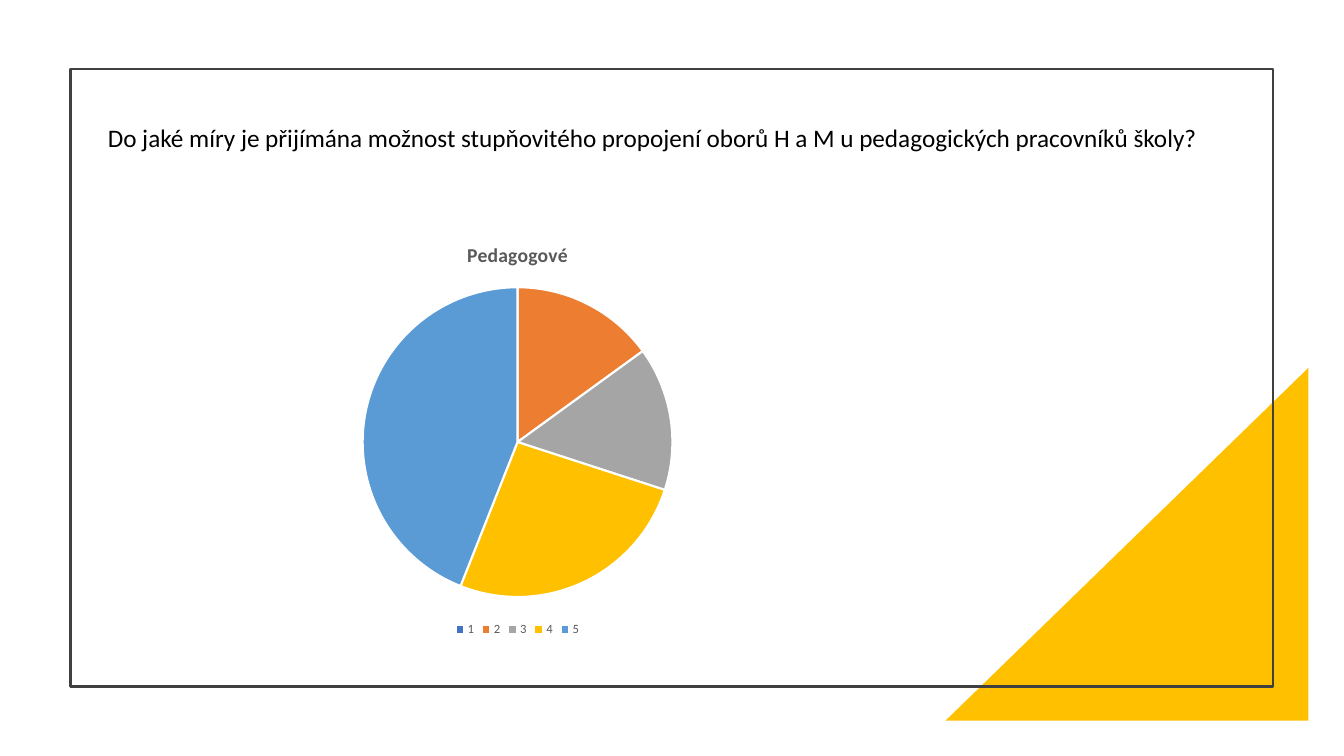
from dataclasses import dataclass

from pptx import Presentation
from pptx.chart.data import CategoryChartData
from pptx.dml.color import RGBColor
from pptx.enum.chart import XL_CHART_TYPE, XL_LEGEND_POSITION
from pptx.enum.shapes import MSO_SHAPE
from pptx.enum.text import MSO_ANCHOR, MSO_AUTO_SIZE, PP_ALIGN
from pptx.util import Pt


@dataclass(frozen=True)
class Theme:
    """Colours, font and type sizes of the slide."""
    font: str = "Calibri"
    text: str = "000000"
    muted: str = "595959"
    frame: str = "404040"
    accent: str = "FFC000"
    gap: str = "FFFFFF"
    slices: tuple = ("4472C4", "ED7D31", "A5A5A5", "FFC000", "5B9BD5")
    question_size: int = 18
    chart_title_size: int = 14
    chart_size: int = 10
    legend_size: int = 9


THEME = Theme()
QUESTION = ("Do jaké míry je přijímána možnost stupňovitého propojení "
            "oborů H a M u pedagogických pracovníků školy?")
SHARES = {"1": 0, "2": 15, "3": 15, "4": 26, "5": 44}


def rgb(value):
    """Turn a hex value into a colour."""
    return RGBColor.from_string(value)


def style_font(font, size, color, bold=False):
    """Apply the theme font with a size and colour."""
    font.name = THEME.font
    font.size = Pt(size)
    font.bold = bold
    font.color.rgb = rgb(color)


def add_corner(slide, box):
    """Add the filled triangle with its right angle at the lower right."""
    sp = slide.shapes.add_shape(MSO_SHAPE.RIGHT_TRIANGLE, *map(Pt, box))
    sp.shadow.inherit = False
    sp.fill.solid()
    sp.fill.fore_color.rgb = rgb(THEME.accent)
    sp.line.fill.background()
    sp.element.spPr.xfrm.set("flipH", "1")


def add_frame(slide, box):
    """Add the unfilled outline around the content."""
    sp = slide.shapes.add_shape(MSO_SHAPE.RECTANGLE, *map(Pt, box))
    sp.shadow.inherit = False
    sp.fill.background()
    sp.line.color.rgb = rgb(THEME.frame)
    sp.line.width = Pt(1.5)


def set_question(slide, box):
    """Place and fill the title placeholder."""
    sp = slide.shapes.title
    sp.left, sp.top, sp.width, sp.height = map(Pt, box)
    tf = sp.text_frame
    tf.word_wrap = True
    tf.auto_size = MSO_AUTO_SIZE.NONE
    tf.vertical_anchor = MSO_ANCHOR.TOP
    p = tf.paragraphs[0]
    p.alignment = PP_ALIGN.JUSTIFY
    p.line_spacing = 1.07
    p.space_after = Pt(8)
    r = p.add_run()
    r.text = QUESTION
    style_font(r.font, THEME.question_size, THEME.text)


def add_pie(slide, box, title, shares):
    """Add a titled pie chart with a legend below."""
    data = CategoryChartData()
    data.categories = list(shares)
    data.add_series(title, list(shares.values()))
    chart = slide.shapes.add_chart(XL_CHART_TYPE.PIE, *map(Pt, box), data).chart
    style_font(chart.font, THEME.chart_size, THEME.text)

    chart.has_title = True
    r = chart.chart_title.text_frame.paragraphs[0].add_run()
    r.text = title
    style_font(r.font, THEME.chart_title_size, THEME.muted, bold=True)
    chart.chart_title.include_in_layout = False

    chart.has_legend = True
    chart.legend.position = XL_LEGEND_POSITION.BOTTOM
    chart.legend.include_in_layout = False
    style_font(chart.legend.font, THEME.legend_size, THEME.muted)

    plot = chart.plots[0]
    plot.vary_by_categories = True
    for i, color in enumerate(THEME.slices):
        fmt = plot.series[0].points[i].format
        fmt.fill.solid()
        fmt.fill.fore_color.rgb = rgb(color)
        fmt.line.color.rgb = rgb(THEME.gap)
        fmt.line.width = Pt(1.5)


def main():
    """Build and save the slide."""
    prs = Presentation()
    prs.slide_width, prs.slide_height = Pt(960), Pt(540)
    slide = prs.slides.add_slide(prs.slide_layouts[5])
    add_corner(slide, (675.4, 262.8, 259.2, 252))
    add_frame(slide, (50.4, 49, 859, 441.4))
    set_question(slide, (69.8, 82, 820, 60.5))
    add_pie(slide, (104.4, 159.8, 530.6, 298), "Pedagogové", SHARES)
    prs.save("out.pptx")


if __name__ == "__main__":
    main()
